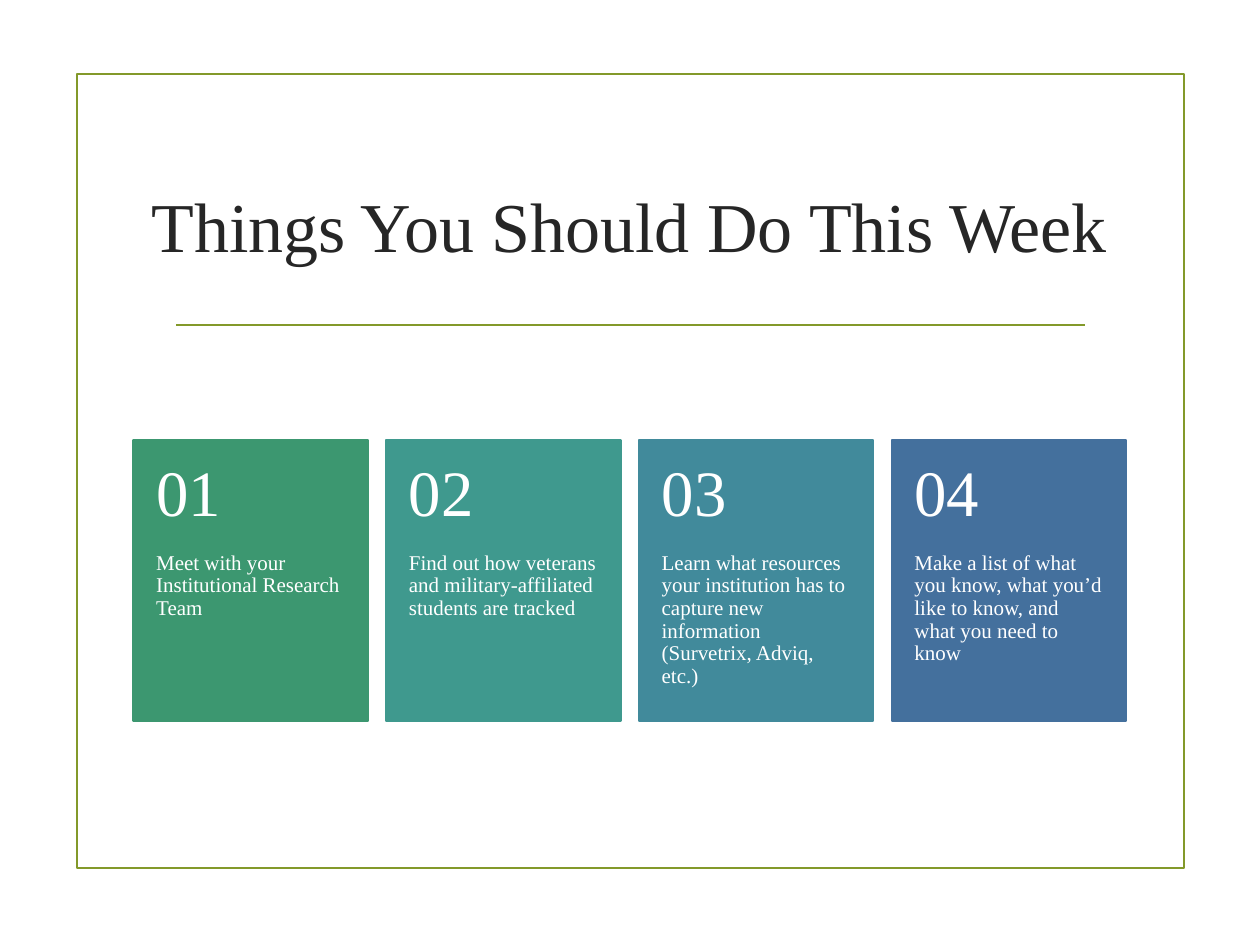
from dataclasses import dataclass

from lxml import etree
from pptx import Presentation
from pptx.dml.color import RGBColor
from pptx.enum import shapes, text
from pptx.oxml.ns import qn
from pptx.shapes.autoshape import Shape
from pptx.slide import Slide
from pptx.util import Inches, Pt


@dataclass(frozen=True)
class Theme:
    font: str = "Times New Roman"
    accent: str = "83992A"
    title_color: str = "262626"
    card_text: str = "FFFFFF"
    title_size: float = 40
    number_size: float = 37
    body_size: float = 12
    line_width: float = 1.25


@dataclass(frozen=True)
class Card:
    task: str
    fill: str


THEME = Theme()
TITLE = "Things You Should Do This Week"
CARDS = [
    Card("Meet with your Institutional Research Team", "3C9770"),
    Card("Find out how veterans and military-affiliated students are tracked", "3F998E"),
    Card("Learn what resources your institution has to capture new information "
         "(Survetrix, Adviq, etc.)", "418A9B"),
    Card("Make a list of what you know, what you’d like to know, "
         "and what you need to know", "44709D"),
]
CARD_LEFT, CARD_TOP, CARD_WIDTH, CARD_HEIGHT = 1.06, 3.49, 1.86, 2.23
CARD_PITCH = 2.006
NUMBER_HEIGHT = 0.4 * CARD_HEIGHT
PADDING = 0.18


def style_text(box: Shape, words: str, size: float, color: str,
               anchor: text.MSO_ANCHOR, insets: tuple[float, ...]) -> text:
    """Fill a box with one paragraph; insets run left, top, right, bottom."""
    frame = box.text_frame
    frame.word_wrap = True
    frame.auto_size = text.MSO_AUTO_SIZE.NONE
    frame.vertical_anchor = anchor
    (frame.margin_left, frame.margin_top,
     frame.margin_right, frame.margin_bottom) = map(Inches, insets)
    para = frame.paragraphs[0]
    para.text = words
    para.font.name = THEME.font
    para.font.size = Pt(size)
    para.font.color.rgb = RGBColor.from_string(color)
    return para


def add_rectangle(page: Slide, left: float, top: float, width: float, height: float,
                  line: str, fill: str | None = None) -> None:
    box = page.shapes.add_shape(shapes.MSO_SHAPE.RECTANGLE, Inches(left), Inches(top),
                                Inches(width), Inches(height))
    box.shadow.inherit = False
    if fill:
        box.fill.solid()
        box.fill.fore_color.rgb = RGBColor.from_string(fill)
    else:
        box.fill.background()
    box.line.color.rgb = RGBColor.from_string(line)
    box.line.width = Pt(THEME.line_width)


def add_rule(page: Slide, left: float, right: float, top: float) -> None:
    rule = page.shapes.add_connector(shapes.MSO_CONNECTOR.STRAIGHT, Inches(left),
                                     Inches(top), Inches(right), Inches(top))
    rule.line.color.rgb = RGBColor.from_string(THEME.accent)
    rule.line.width = Pt(THEME.line_width)
    etree.SubElement(rule._element.spPr, qn("a:effectLst"))


def set_title(page: Slide) -> None:
    title = page.shapes.title
    title.left, title.top = Inches(1.06), Inches(1.07)
    title.width, title.height = Inches(7.87), Inches(1.43)
    para = style_text(title, TITLE, THEME.title_size, THEME.title_color,
                      text.MSO_ANCHOR.MIDDLE, (0.1, 0.05, 0.1, 0.05))
    para.alignment = text.PP_ALIGN.CENTER


def add_card_text(page: Slide, left: float, top: float, height: float, words: str,
                  size: float, anchor: text.MSO_ANCHOR,
                  insets: tuple[float, ...]) -> None:
    box = page.shapes.add_textbox(Inches(left), Inches(top),
                                  Inches(CARD_WIDTH), Inches(height))
    para = style_text(box, words, size, THEME.card_text, anchor, insets)
    para.line_spacing = 0.9


def add_card(page: Slide, index: int, card: Card) -> None:
    left = CARD_LEFT + index * CARD_PITCH
    add_rectangle(page, left, CARD_TOP, CARD_WIDTH, CARD_HEIGHT, card.fill, card.fill)
    add_card_text(page, left, CARD_TOP + NUMBER_HEIGHT, CARD_HEIGHT - NUMBER_HEIGHT,
                  card.task, THEME.body_size, text.MSO_ANCHOR.TOP,
                  (PADDING, 0, PADDING, 2 * PADDING))
    add_card_text(page, left, CARD_TOP, NUMBER_HEIGHT, f"{index + 1:02}",
                  THEME.number_size, text.MSO_ANCHOR.MIDDLE, (PADDING,) * 4)


def main() -> None:
    deck = Presentation()
    deck.slide_width, deck.slide_height = Inches(10), Inches(7.5)
    page = deck.slides.add_slide(deck.slide_layouts.get_by_name("Title Only"))
    set_title(page)
    add_rectangle(page, 0.61, 0.59, 8.79, 6.3, THEME.accent)
    add_rule(page, 1.4, 8.61, 2.58)
    for index, card in enumerate(CARDS):
        add_card(page, index, card)
    deck.save("out.pptx")


if __name__ == "__main__":
    main()
